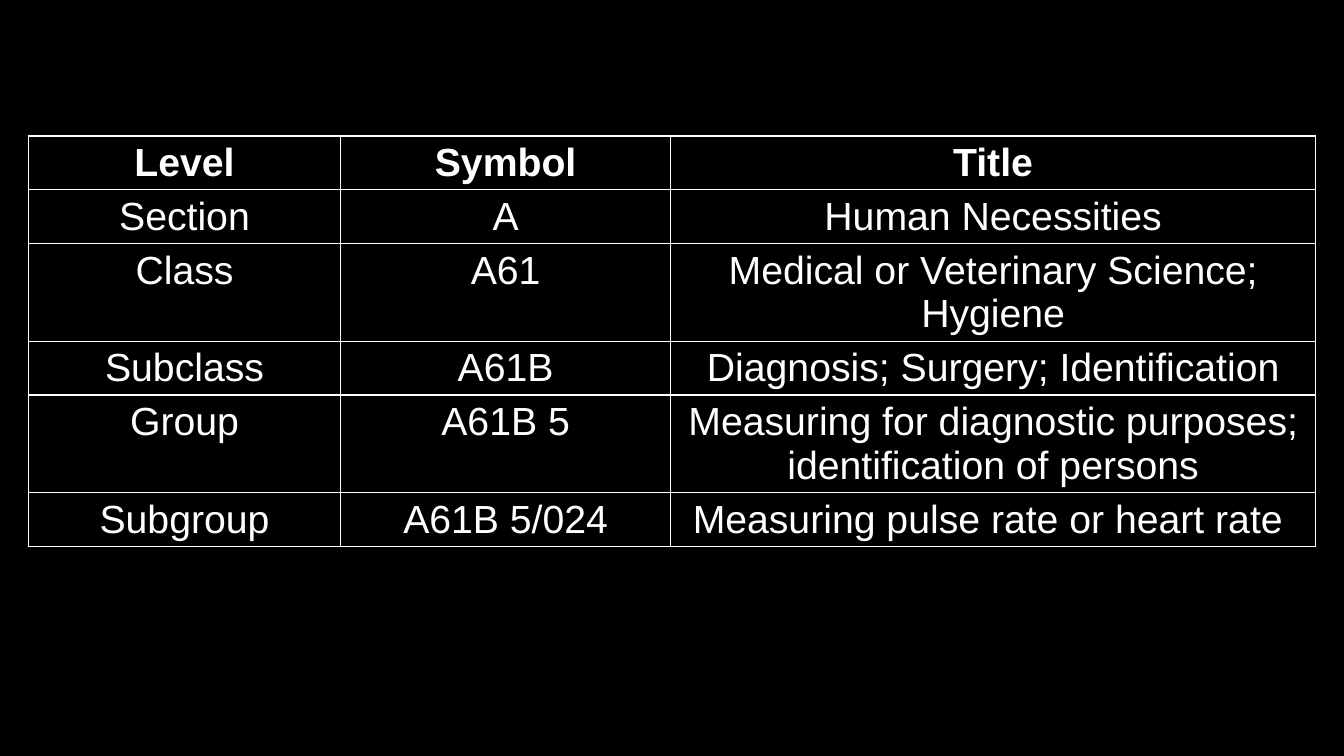
from lxml.etree import SubElement
from pptx import Presentation
from pptx.dml.color import RGBColor
from pptx.enum.text import PP_ALIGN as Align
from pptx.oxml.ns import qn
from pptx.util import Inches, Pt


def color(value):
    return RGBColor.from_string(value)


class SlideBuilder:
    """Hold the style and the current slide, and add elements to it."""

    font_name = "Arial"
    font_size = Pt(28)
    ink = "FFFFFF"
    paper = "000000"
    border_width = Pt(1)

    def __init__(self, slide):
        self.slide = slide

    def background(self):
        fill = self.slide.background.fill
        fill.solid()
        fill.fore_color.rgb = color(self.paper)

    def table(self, left, top, widths, row_height, rows):
        frame = self.slide.shapes.add_table(
            len(rows), len(widths), Inches(left), Inches(top),
            Inches(sum(widths)), Inches(row_height * len(rows)))
        table = frame.table
        table.horz_banding = False
        for column, width in zip(table.columns, widths):
            column.width = Inches(width)
        for row_index, (row, texts) in enumerate(zip(table.rows, rows)):
            row.height = Inches(row_height)
            for cell, text in zip(row.cells, texts):
                self.cell(cell, text, bold=row_index == 0)

    def cell(self, cell, text, bold):
        cell.text_frame.text = text
        para = cell.text_frame.paragraphs[0]
        para.alignment = Align.CENTER
        for span in para.runs:
            span.font.name = self.font_name
            span.font.size = self.font_size
            span.font.bold = bold
            span.font.color.rgb = color(self.ink)
        self.borders(cell)
        cell.fill.solid()
        cell.fill.fore_color.rgb = color(self.paper)

    def borders(self, cell):
        properties = cell._tc.get_or_add_tcPr()
        for side in ("a:lnL", "a:lnR", "a:lnT", "a:lnB"):
            line = SubElement(properties, qn(side), w=str(self.border_width))
            fill = SubElement(line, qn("a:solidFill"))
            SubElement(fill, qn("a:srgbClr"), val=self.ink)


def main():
    deck = Presentation()
    deck.slide_width = Inches(13.33)
    deck.slide_height = Inches(7.5)
    page = SlideBuilder(deck.slides.add_slide(deck.slide_layouts[6]))
    page.background()
    page.table(0.28, 1.35, (3.1, 3.27, 6.4), 0.41, [
        ("Level", "Symbol", "Title"),
        ("Section", "A", "Human Necessities"),
        ("Class", "A61", "Medical or Veterinary Science; Hygiene"),
        ("Subclass", "A61B", "Diagnosis; Surgery; Identification"),
        ("Group", "A61B 5",
         "Measuring for diagnostic purposes; identification of persons"),
        ("Subgroup", "A61B 5/024", "Measuring pulse rate or heart rate "),
    ])
    deck.save("out.pptx")


if __name__ == "__main__":
    main()
